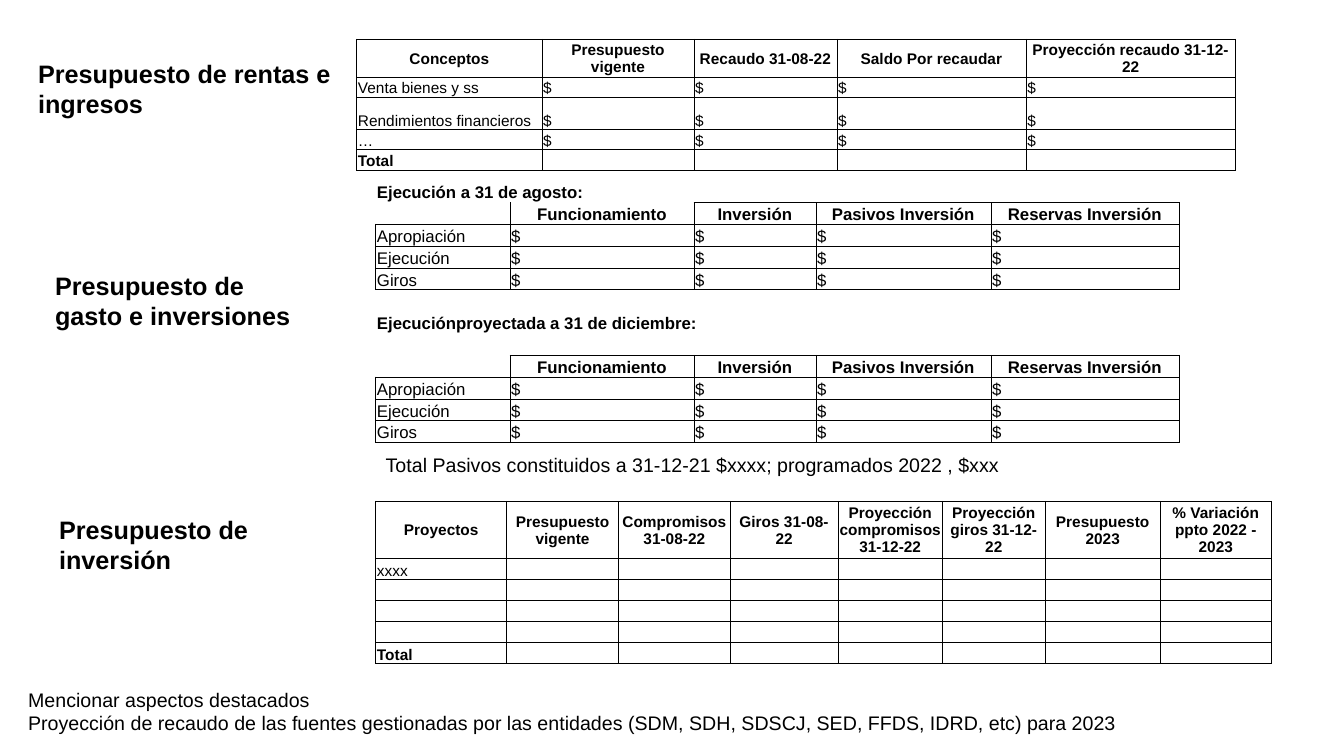
from lxml import etree
from pptx import Presentation
from pptx import util as u
from pptx.dml.color import RGBColor
from pptx.enum import text
from pptx.oxml.ns import qn

BLACK = RGBColor(0x00, 0x00, 0x00)
WHITE = RGBColor(0xFF, 0xFF, 0xFF)
FONT = "Arial"
ALL_SIDES = "LRTB"
CELL_FORMAT = {
    "margin_left": u.Cm(0.03),
    "margin_right": u.Cm(0.03),
    "margin_top": u.Cm(0.03),
    "margin_bottom": u.Cm(0),
}
HEADINGS = [
    ("Presupuesto de rentas e ingresos", (0.71, 1.35, 9.04, 1.8)),
    ("Presupuesto de gasto e inversiones", (1.14, 6.68, 6.78, 1.8)),
    ("Presupuesto de inversión", (1.24, 12.83, 7.54, 1.8)),
]
NOTES = [
    (["Total Pasivos constituidos a 31-12-21 $xxxx; programados 2022 , $xxx"],
     (9.47, 11.3, 17.25, 0.86)),
    (["Mencionar aspectos destacados",
      "Proyección de recaudo de las fuentes gestionadas por las entidades "
      "(SDM, SDH, SDSCJ, SED, FFDS, IDRD, etc) para 2023"],
     (0.46, 17.2, 31.7, 2.06)),
]
INCOME_ROWS = [
    ["Conceptos", "Presupuesto vigente", "Recaudo 31-08-22",
     "Saldo Por recaudar", "Proyección recaudo 31-12-22"],
    *[[concept] + ["$"] * 4
      for concept in ("Venta bienes y ss", "Rendimientos financieros", "…")],
    ["Total"] + [""] * 4,
]
EXECUTION_BLOCK = [
    ["", "Funcionamiento", "Inversión", "Pasivos Inversión", "Reservas Inversión"],
    *[[stage] + ["$"] * 4 for stage in ("Apropiación", "Ejecución", "Giros")],
]
EXECUTION_ROWS = [
    ["Ejecución a 31 de agosto:"] + [""] * 4,
    *EXECUTION_BLOCK,
    [""] * 5,
    ["Ejecuciónproyectada a 31 de diciembre:"] + [""] * 4,
    [""] * 5,
    *EXECUTION_BLOCK,
]
EXECUTION_SIDES = {
    0: ["", "", "B", "B", "B"],
    1: ["RB", "LRB"] + [ALL_SIDES] * 3,
    5: ["T"] * 5,
    6: [""] * 5,
    7: [""] + ["B"] * 4,
    8: ["RB"] + [ALL_SIDES] * 4,
}
PROJECT_ROWS = [
    ["Proyectos", "Presupuesto vigente", "Compromisos 31-08-22", "Giros 31-08-22",
     "Proyección compromisos 31-12-22", "Proyección giros 31-12-22",
     "Presupuesto 2023", "% Variación ppto 2022 - 2023"],
    *[[project] + [""] * 7 for project in ("xxxx", "", "", "", "Total")],
]


def set_format(target, values):
    """Set each named attribute of the target."""
    for name, value in values.items():
        setattr(target, name, value)


def write_paragraph(paragraph, content, size, bold=False):
    """Write one run, or give an empty paragraph its size."""
    if not content:
        paragraph._p.get_or_add_endParaRPr().set("sz", str(int(size * 100)))
        return
    run = paragraph.add_run()
    run.text = content
    set_format(run.font, {"name": FONT, "size": u.Pt(size), "bold": bold})
    run.font.color.rgb = BLACK


def add_text(slide, lines, box, size, bold=False):
    """Add a wrapping text box with one paragraph per line."""
    frame = slide.shapes.add_textbox(*map(u.Cm, box)).text_frame
    frame.word_wrap = True
    for index, line in enumerate(lines):
        paragraph = frame.add_paragraph() if index else frame.paragraphs[0]
        write_paragraph(paragraph, line, size, bold)


def draw_borders(cell, sides):
    """Draw the named sides of a cell and clear the others."""
    properties = cell._tc.get_or_add_tcPr()
    for side in ALL_SIDES:
        line = etree.SubElement(properties, qn(f"a:ln{side}"), w=str(u.Pt(0.5)))
        if side in sides:
            fill = etree.SubElement(line, qn("a:solidFill"))
            etree.SubElement(fill, qn("a:srgbClr"), val=str(BLACK))
        else:
            etree.SubElement(line, qn("a:noFill"))


def format_cell(cell, content, size, header, bold, anchor, sides):
    """Fill in and format one table cell."""
    set_format(cell, {**CELL_FORMAT, "vertical_anchor": anchor})
    draw_borders(cell, sides)
    cell.fill.solid()
    cell.fill.fore_color.rgb = WHITE
    paragraph = cell.text_frame.paragraphs[0]
    if header:
        paragraph.alignment = text.PP_ALIGN.CENTER
    write_paragraph(paragraph, content, size, bold)


def add_table(slide, origin, widths, heights, rows, size, headers=(0,),
              bold_rows=(), header_anchor=text.MSO_ANCHOR.MIDDLE, sides=None):
    """Add a ruled table and return it."""
    box = (*origin, sum(widths), sum(heights))
    table = slide.shapes.add_table(len(rows), len(widths), *map(u.Cm, box)).table
    set_format(table, {"first_row": False, "horz_banding": False})
    for column, width in zip(table.columns, widths):
        column.width = u.Cm(width)
    for row, height in zip(table.rows, heights):
        row.height = u.Cm(height)
    for r, contents in enumerate(rows):
        header = r in headers
        anchor = header_anchor if header else text.MSO_ANCHOR.BOTTOM
        row_sides = (sides or {}).get(r, [ALL_SIDES] * len(widths))
        for c, content in enumerate(contents):
            format_cell(table.cell(r, c), content, size, header,
                        header or r in bold_rows, anchor, row_sides[c])
    return table


def main():
    """Build the budget slide and save it."""
    presentation = Presentation()
    set_format(presentation, {"slide_width": u.Cm(33.87), "slide_height": u.Cm(19.05)})
    slide = presentation.slides.add_slide(presentation.slide_layouts[6])
    execution = add_table(
        slide, (9.47, 4.55), [3.38, 4.64, 3.07, 4.41, 4.74], [0.55] * 12,
        EXECUTION_ROWS, 12, headers=(1, 8), bold_rows=(0, 6),
        header_anchor=text.MSO_ANCHOR.BOTTOM, sides=EXECUTION_SIDES)
    for row, last_column in ((0, 1), (6, 2)):
        execution.cell(row, 0).merge(execution.cell(row, last_column))
    add_table(slide, (8.99, 0.99), [4.67, 3.83, 3.6, 4.77, 5.27],
              [0.95, 0.5, 0.83, 0.5, 0.5], INCOME_ROWS, 11, bold_rows=(4,))
    add_table(slide, (9.47, 12.63), [3.3, 2.82, 2.81, 2.72, 2.63, 2.59, 2.9, 2.8],
              [1.44] + [0.53] * 5, PROJECT_ROWS, 11, bold_rows=(5,))
    for heading, box in HEADINGS:
        add_text(slide, [heading], box, 18, bold=True)
    for lines, box in NOTES:
        add_text(slide, lines, box, 14)
    presentation.save("out.pptx")


if __name__ == "__main__":
    main()
